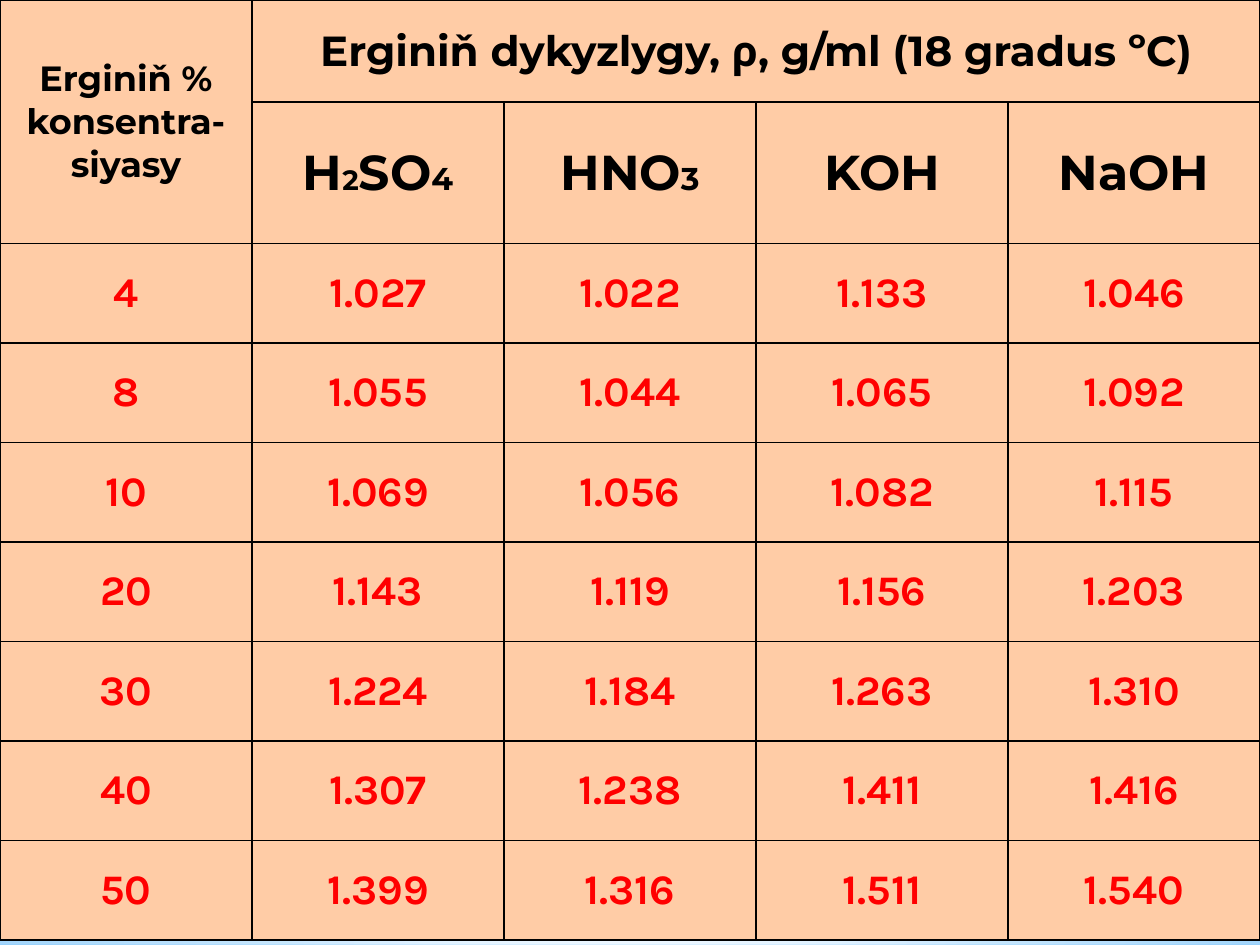
from typing import NamedTuple

from lxml import etree
from pptx import Presentation
from pptx import util as u
from pptx.dml.color import RGBColor
from pptx.enum import shapes, text
from pptx.oxml import ns

COLORS = {
    "cell": "FFCCA6",
    "header": "000000",
    "value": "FF0000",
    "border": "000000",
    "sky": "9ED5FF",
    "deep": "5BB9FF",
    "pale": "B4DCFA",
    "white": "FFFFFF",
}


class Run(NamedTuple):
    text: str
    size: int


class Style(NamedTuple):
    font: str
    color: str


class Stop(NamedTuple):
    position: int
    color: str
    opacity: int = 100


class Gradient(NamedTuple):
    stops: list[Stop]
    focus: tuple[int, ...] = ()


class Glow(NamedTuple):
    kind: shapes.MSO_SHAPE
    top: float
    height: float
    gradient: Gradient


CENTER = (50, 50, 50, 50)
SKY = Gradient([Stop(0, "sky"), Stop(60, "white"), Stop(100, "deep")], (20, 10, 20, 60))
GLOWS = [
    Glow(shapes.MSO_SHAPE.RECTANGLE, 5.58, 1.92, Gradient(
        [Stop(0, "white", 91), Stop(37, "white", 76), Stop(100, "pale", 79)], CENTER)),
    Glow(shapes.MSO_SHAPE.RECTANGLE, 0, 5.58, Gradient(
        [Stop(0, "white", 89), Stop(48, "white", 62), Stop(100, "pale", 79)], CENTER)),
    Glow(shapes.MSO_SHAPE.RECTANGLE, 4.12, 2.5, Gradient(
        [Stop(0, "white", 0), Stop(29, "white", 30), Stop(45, "pale", 40),
         Stop(55, "white", 26), Stop(65, "pale", 60), Stop(100, "white", 0)])),
    Glow(shapes.MSO_SHAPE.OVAL, 1.75, 5.58, Gradient(
        [Stop(0, "white"), Stop(56, "white", 0)], CENTER)),
]

HEADER = Style("Montserrat", "header")
VALUE = Style("Karla", "value")

CORNER = [[Run("Erginiň % konsentra-", 20)], [Run("siyasy", 20)]]
DENSITY = [[Run("Erginiň dykyzlygy, ρ, g/ml (18 gradus ºC)", 24)]]
FORMULAS = [
    [Run("H", 28), Run("2", 16), Run("SO", 28), Run("4", 18)],
    [Run("HNO", 28), Run("3", 18)],
    [Run("KOH", 28)],
    [Run("NaOH", 28)],
]
DENSITIES = [
    ("4", "1.027", "1.022", "1.133", "1.046"),
    ("8", "1.055", "1.044", "1.065", "1.092"),
    ("10", "1.069", "1.056", "1.082", "1.115"),
    ("20", "1.143", "1.119", "1.156", "1.203"),
    ("30", "1.224", "1.184", "1.263", "1.310"),
    ("40", "1.307", "1.238", "1.411", "1.416"),
    ("50", "1.399", "1.316", "1.511", "1.540"),
]
SLIDE_WIDTH = 10
COL_WIDTH = 2
ROW_HEIGHTS = [0.81, 1.12] + [0.79] * len(DENSITIES)


def rgb(name: str) -> RGBColor:
    return RGBColor.from_string(COLORS[name])


def set_gradient(fill, element, gradient: Gradient) -> None:
    fill.gradient()
    grad = next(element.iter(ns.qn("a:gradFill")))
    grad.clear()
    stops = etree.SubElement(grad, ns.qn("a:gsLst"))
    for stop in gradient.stops:
        gs = etree.SubElement(stops, ns.qn("a:gs"), pos=str(stop.position * 1000))
        clr = etree.SubElement(gs, ns.qn("a:srgbClr"), val=COLORS[stop.color])
        if stop.opacity < 100:
            etree.SubElement(clr, ns.qn("a:alpha"), val=str(stop.opacity * 1000))
    if gradient.focus:
        circle = etree.SubElement(grad, ns.qn("a:path"), {"path": "circle"})
        rect = etree.SubElement(circle, ns.qn("a:fillToRect"))
        for side, value in zip("ltrb", gradient.focus):
            rect.set(side, str(value * 1000))
    else:
        etree.SubElement(grad, ns.qn("a:lin"), ang=str(90 * 60000), scaled="0")


def add_glow(s, glow: Glow) -> None:
    sp = s.shapes.add_shape(
        glow.kind, 0, u.Inches(glow.top), u.Inches(SLIDE_WIDTH), u.Inches(glow.height))
    sp.shadow.inherit = False
    sp.line.fill.background()
    set_gradient(sp.fill, sp.element, glow.gradient)


def format_cell(cell) -> None:
    tc_pr = cell._tc.get_or_add_tcPr()
    for side in ("lnL", "lnR", "lnT", "lnB"):
        ln = etree.SubElement(tc_pr, ns.qn(f"a:{side}"), w=str(u.Pt(1)))
        fill = etree.SubElement(ln, ns.qn("a:solidFill"))
        etree.SubElement(fill, ns.qn("a:srgbClr"), val=COLORS["border"])
    cell.fill.solid()
    cell.fill.fore_color.rgb = rgb("cell")
    cell.vertical_anchor = text.MSO_ANCHOR.MIDDLE


def write_cell(cell, paragraphs: list[list[Run]], style: Style) -> None:
    tf = cell.text_frame
    for i, runs in enumerate(paragraphs):
        p = tf.add_paragraph() if i else tf.paragraphs[0]
        p.alignment = text.PP_ALIGN.CENTER
        for run in runs:
            r = p.add_run()
            r.text = run.text
            r.font.size = u.Pt(run.size)
            r.font.name = style.font
            r.font.bold = True
            r.font.color.rgb = rgb(style.color)


def add_density_table(s) -> None:
    cols = len(FORMULAS) + 1
    table = s.shapes.add_table(
        len(ROW_HEIGHTS), cols, 0, 0,
        u.Inches(COL_WIDTH * cols), u.Inches(sum(ROW_HEIGHTS)),
    ).table
    for col in table.columns:
        col.width = u.Inches(COL_WIDTH)
    for row, height in zip(table.rows, ROW_HEIGHTS):
        row.height = u.Inches(height)
    for cell in table.iter_cells():
        format_cell(cell)

    table.cell(0, 0).merge(table.cell(1, 0))
    table.cell(0, 1).merge(table.cell(0, cols - 1))
    write_cell(table.cell(0, 0), CORNER, HEADER)
    write_cell(table.cell(0, 1), DENSITY, HEADER)
    for c, runs in enumerate(FORMULAS, 1):
        write_cell(table.cell(1, c), [runs], HEADER)
    for r, values in enumerate(DENSITIES, 2):
        for c, value in enumerate(values):
            write_cell(table.cell(r, c), [[Run(value, 24)]], VALUE)


def main() -> None:
    prs = Presentation()
    prs.slide_width, prs.slide_height = u.Inches(SLIDE_WIDTH), u.Inches(7.5)
    s = prs.slides.add_slide(prs.slide_layouts[6])
    set_gradient(s.background.fill, s.element, SKY)
    for glow in GLOWS:
        add_glow(s, glow)
    add_density_table(s)
    prs.save("out.pptx")


if __name__ == "__main__":
    main()
